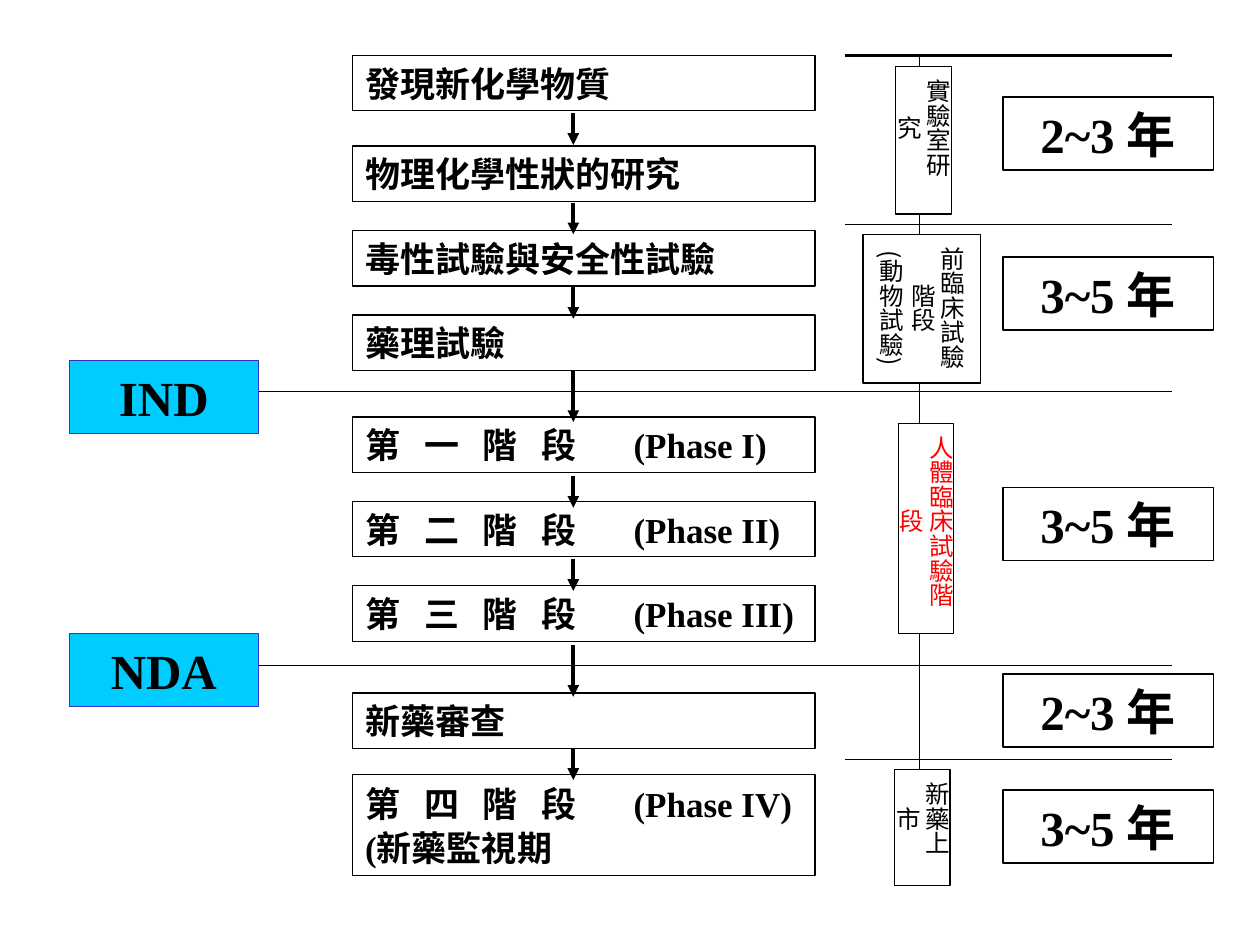
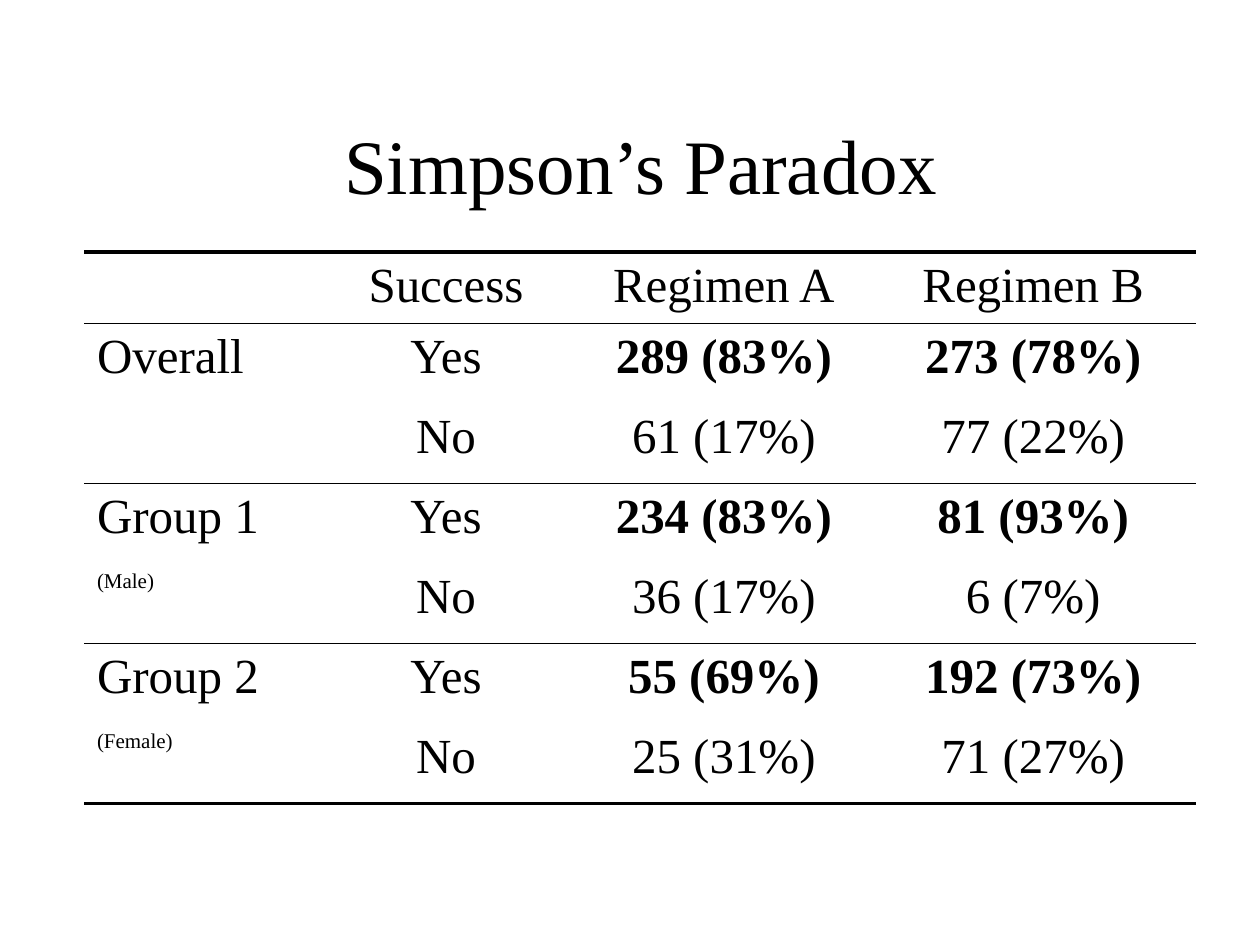
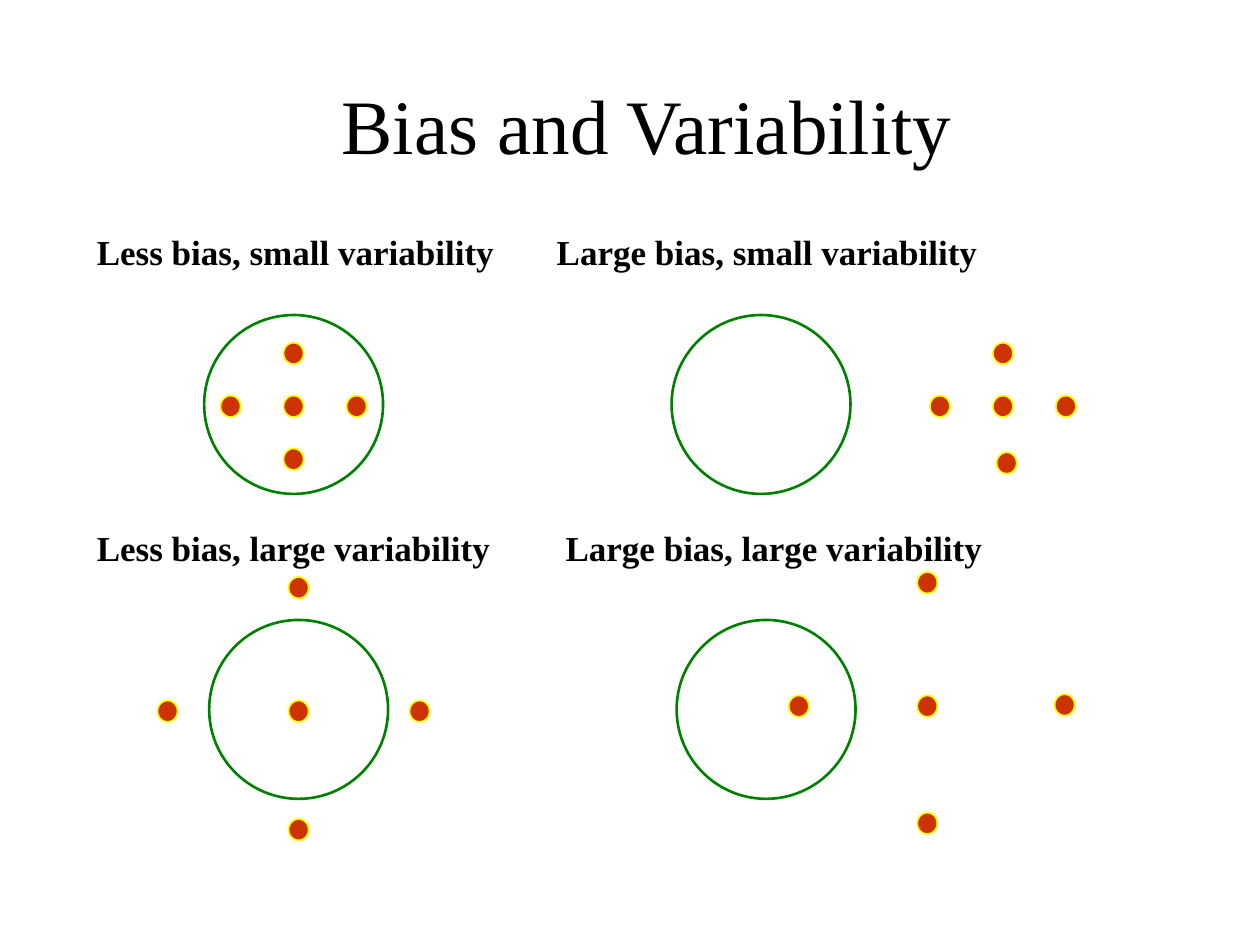
"""Build three slides: drug approval steps, Simpson's paradox, bias and variability."""
from pptx import Presentation
from pptx.dml.color import RGBColor
from pptx.enum import shapes, text
from pptx.oxml import ns, xmlchemy
from pptx.util import Inches, Pt

BLACK = RGBColor(0x00, 0x00, 0x00)
RED = RGBColor(0xFF, 0x00, 0x00)
CYAN = RGBColor(0x00, 0xCC, 0xFF)
BLUE = RGBColor(0x33, 0x33, 0xCC)
GREEN = RGBColor(0x00, 0x80, 0x00)
RUST = RGBColor(0xCC, 0x33, 0x00)
YELLOW = RGBColor(0xFF, 0xFF, 0x00)
SERIF, SANS = "Times New Roman", "Noto Sans CJK SC"
LEFT, MID, FULL = text.PP_ALIGN.LEFT, text.PP_ALIGN.CENTER, text.PP_ALIGN.JUSTIFY
RECT, OVAL = shapes.MSO_SHAPE.RECTANGLE, shapes.MSO_SHAPE.OVAL
NO_GRID = "{2D5ABB26-0587-4C30-8999-92F81FD0307C}"


def phase(mark, name):
    return "\t".join(("第", mark, "階", "段", f"(Phase {name})"))


STEPS = [
    (0.44, 0.44, ["發現新化學物質"]),
    (1.16, 0.44, ["物理化學性狀的研究"]),
    (1.83, 0.44, ["毒性試驗與安全性試驗"]),
    (2.5, 0.44, ["藥理試驗"]),
    (3.31, 0.44, [phase("一", "I")]),
    (3.98, 0.44, [phase("二", "II")]),
    (4.65, 0.44, [phase("三", "III")]),
    (5.5, 0.44, ["新藥審查"]),
    (6.15, 0.8, [phase("四", "IV"), "(新藥監視期"]),
]
STOPS = (0.47, 0.93, 1.4, 2.13)
ARROWS = [(0.9, 1.15), (1.61, 1.86), (2.28, 2.53), (2.94, 3.35),
          (3.78, 4.03), (4.44, 4.69), (5.12, 5.53), (5.94, 6.19)]
RULES = [(6.71, 0.44, 1.5), (6.71, 1.78, 0.75), (2.05, 3.11, 0.75),
         (2.05, 5.28, 0.75), (6.71, 6.03, 0.75)]
LINKS = [(0.44, 0.53), (1.69, 1.86), (3.03, 3.36), (5.03, 6.11)]
STAGES = [
    ((7.11, 0.53, 0.44, 1.17), ["實驗室研究"], BLACK, SERIF),
    ((6.85, 1.86, 0.93, 1.18), ["前臨床試驗階段", "(動物試驗)"], BLACK, SANS),
    ((7.13, 3.36, 0.44, 1.67), ["人體臨床試驗階段"], RED, SERIF),
    ((7.1, 6.11, 0.44, 0.92), ["新藥上市"], BLACK, SERIF),
]
YEARS = [(0.77, "2~3 年"), (2.04, "3~5 年"), (3.87, "3~5 年"),
         (5.35, "2~3 年"), (6.27, "3~5 年")]
GATES = [(2.86, "IND"), (5.03, "NDA")]

TRIAL = [
    ("", "Success", "Regimen A", "Regimen B"),
    ("Overall", "Yes", "289 (83%)", "273 (78%)"),
    ("", "No", "61 (17%)", "77 (22%)"),
    ("Group 1", "Yes", "234 (83%)", "81 (93%)"),
    ("(Male)", "No", "36 (17%)", "6 (7%)"),
    ("Group 2", "Yes", "55 (69%)", "192 (73%)"),
    ("(Female)", "No", "25 (31%)", "71 (27%)"),
]
WIDTHS = (1.83, 2.08, 2.33, 2.58)
HEIGHTS = (0.53,) + (0.635,) * 6
EDGES = {0: 1, 2: 1, 4: 1, 6: 2.25}

LABELS = [
    ("Less bias, small variability", "Large bias, small variability", 3.65, 0),
    ("Less bias, large variability", "Large bias, large variability", 3.72, 145),
]
TARGETS = [
    ((1.62, 2.5), [(2.25, 2.72), (2.25, 3.14), (2.25, 3.56), (2.75, 3.14), (1.75, 3.14)]),
    ((5.33, 2.5), [(7.88, 2.72), (7.88, 3.14), (7.91, 3.59), (8.38, 3.14), (7.38, 3.14)]),
    ((1.66, 4.92), [(2.29, 4.58), (2.29, 5.56), (2.29, 6.5), (3.25, 5.56), (1.25, 5.56)]),
    ((5.37, 4.92), [(7.28, 4.54), (7.28, 5.52), (7.28, 6.45), (8.37, 5.51), (6.26, 5.52)]),
]


def add(node, tag, **keys):
    child = xmlchemy.OxmlElement(tag)
    for key, value in keys.items():
        child.set(key, str(value))
    node.append(child)
    return child


def write(para, words, size, bold=False, align=LEFT, color=BLACK, face=SERIF, stops=()):
    para.alignment = align
    if stops:
        tabs = add(para._p.get_or_add_pPr(), "a:tabLst")
        for stop in stops:
            add(tabs, "a:tab", pos=Inches(stop), algn="l")
    run = para.add_run()
    run.text = words
    font = run.font
    font.size, font.bold, font.name = Pt(size), bold, face
    font.color.rgb = color
    add(run._r.get_or_add_rPr(), "a:ea", typeface=SANS)


def draw(slide, kind, box, fill=None, line=BLACK, width=0.75):
    shape = slide.shapes.add_shape(kind, *map(Inches, box))
    shape.shadow.inherit = False
    if fill is None:
        shape.fill.background()
    else:
        shape.fill.solid()
        shape.fill.fore_color.rgb = fill
    shape.line.color.rgb = line
    shape.line.width = Pt(width)
    return shape


def label(slide, box, lines, size, fill=None, line=BLACK, down=False, **style):
    frame = draw(slide, RECT, box, fill, line).text_frame
    frame.word_wrap = True
    frame.auto_size = text.MSO_AUTO_SIZE.SHAPE_TO_FIT_TEXT
    frame.vertical_anchor = text.MSO_ANCHOR.MIDDLE
    if down:
        frame._txBody.bodyPr.set("vert", "eaVert")
    for i, words in enumerate(lines):
        para = frame.add_paragraph() if i else frame.paragraphs[0]
        if i:
            para.space_before = Pt(1)
        write(para, words, size, **style)


def join(slide, start, end, width=0.75, arrow=False):
    line = slide.shapes.add_connector(
        shapes.MSO_CONNECTOR.STRAIGHT, *map(Inches, start + end))
    line.line.color.rgb = BLACK
    line.line.width = Pt(width)
    if arrow:
        add(line.line._get_or_add_ln(), "a:tailEnd", type="triangle")
    add(line._element.spPr, "a:effectLst")


def frame_at(slide, box):
    frame = slide.shapes.add_textbox(*map(Inches, box)).text_frame
    frame.word_wrap = True
    return frame


def title(slide, words, left, top):
    frame = frame_at(slide, (left, top, 7.83, 1.25))
    frame.vertical_anchor = text.MSO_ANCHOR.MIDDLE
    write(frame.paragraphs[0], words, 44, align=MID)


def edge(cell, tag, width):
    line = add(cell._tc.get_or_add_tcPr(), tag, w=Pt(width))
    add(add(line, "a:solidFill"), "a:srgbClr", val=BLACK)


def flow(slide):
    for top, high, lines in STEPS:
        stops = STOPS if "\t" in lines[0] else ()
        label(slide, (2.8, top, 3.67, high), lines, 20, bold=True, align=FULL, stops=stops)
    for left, top, width in RULES:
        join(slide, (left, top), (9.3, top), width)
    for top, end in ARROWS:
        join(slide, (4.55, top), (4.55, end), 2.25, True)
    for top, end in LINKS:
        join(slide, (7.3, top), (7.3, end))
    for box, lines, color, face in STAGES:
        label(slide, box, lines, 14, down=True, align=MID, color=color, face=face)
    for top, words in YEARS:
        label(slide, (7.96, top, 1.67, 0.58), [words], 28, bold=True, align=MID)
    for top, words in GATES:
        label(slide, (0.55, top, 1.5, 0.58), [words], 28, CYAN, BLUE, bold=True, align=MID)


def paradox(slide):
    title(slide, "Simpson’s Paradox", 1.17, 0.67)
    box = map(Inches, (0.67, 2, sum(WIDTHS), sum(HEIGHTS)))
    table = slide.shapes.add_table(len(TRIAL), len(WIDTHS), *box).table
    table.first_row = table.horz_banding = False
    table._tbl.tblPr.find(ns.qn("a:tableStyleId")).text = NO_GRID
    for col, width in zip(table.columns, WIDTHS):
        col.width = Inches(width)
    for r, (row, high) in enumerate(zip(TRIAL, HEIGHTS)):
        table.rows[r].height = Inches(high)
        for c, words in enumerate(row):
            cell = table.cell(r, c)
            if r == 0:
                edge(cell, "a:lnT", 2.25)
            if r in EDGES:
                edge(cell, "a:lnB", EDGES[r])
            cell.fill.background()
            if words:
                write(cell.text_frame.paragraphs[0], words,
                      12 if words.startswith("(") else 28,
                      bold=c > 1 and row[1] == "Yes", align=MID if c else LEFT)


def bias(slide):
    frame = frame_at(slide, (0.67, 1.78, 8.84, 4.95))
    for i, (near, far, stop, gap) in enumerate(LABELS):
        para = frame.add_paragraph() if i else frame.paragraphs[0]
        if gap:
            para.space_before = Pt(gap)
        write(para, f"{near}\t{far}", 20, bold=True, stops=(stop,))
    for ring, dots in TARGETS:
        draw(slide, OVAL, ring + (1.42, 1.42), line=GREEN, width=1.5)
        for dot in dots:
            draw(slide, OVAL, dot + (0.16, 0.17), RUST, YELLOW, 1)
    title(slide, "Bias and Variability", 1.22, 0.36)


def main():
    deck = Presentation()
    deck.slide_width, deck.slide_height = Inches(10), Inches(7.5)
    for build in (flow, paradox, bias):
        build(deck.slides.add_slide(deck.slide_layouts[6]))
    deck.save("out.pptx")


if __name__ == "__main__":
    main()
